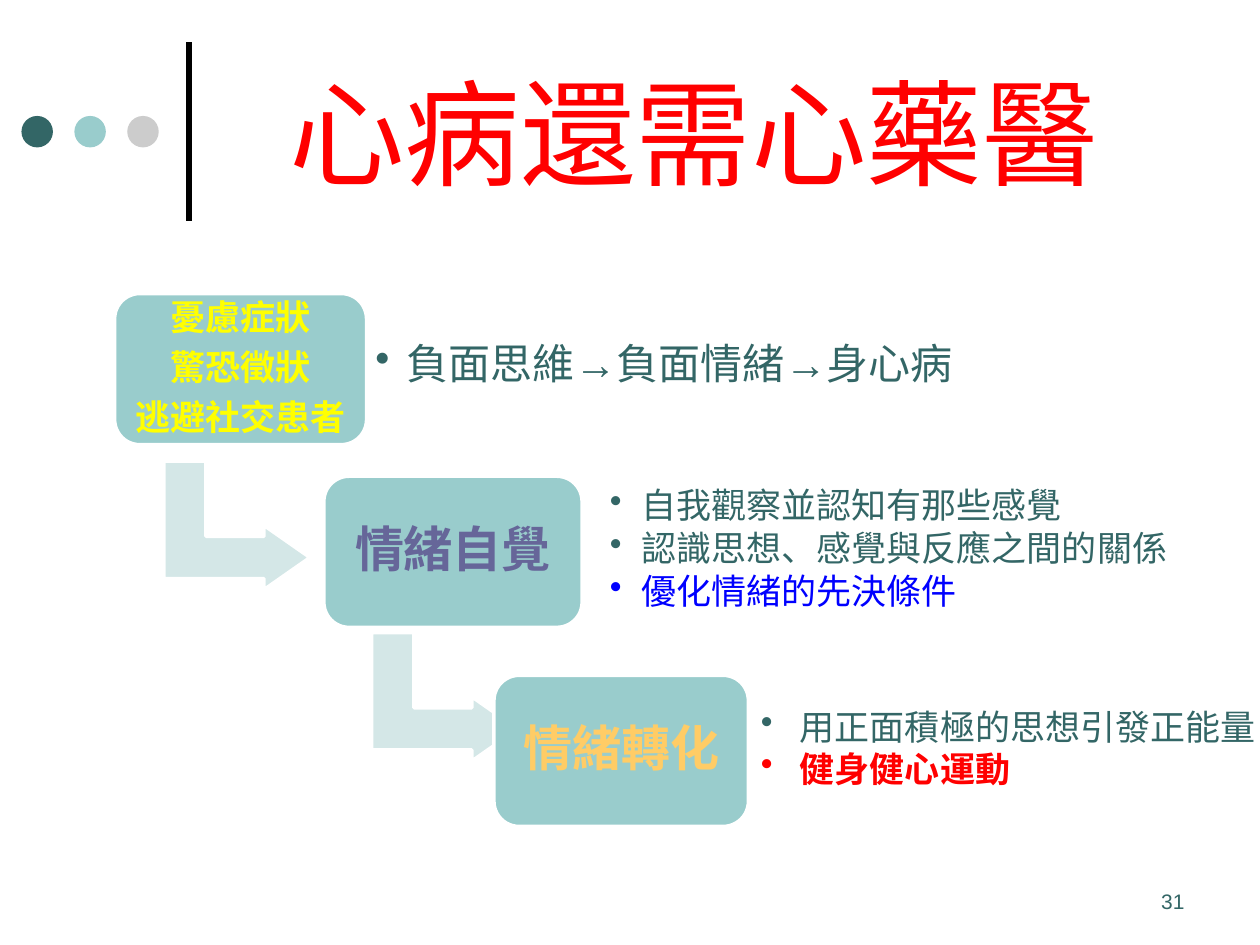
from lxml import etree
from pptx import Presentation
from pptx.dml.color import RGBColor
from pptx.enum import shapes, text
from pptx.oxml.ns import qn
from pptx.util import Inches, Pt

TEAL, AQUA, PALE, GREY = "336666", "99CCCC", "D4E7E7", "CCCCCC"
WHITE, BLACK, RED, BLUE = "FFFFFF", "000000", "FF0000", "0000FF"
YELLOW, PURPLE, ORANGE = "FFFF00", "666699", "FFCC66"
MIDDLE, CENTER = text.MSO_ANCHOR.MIDDLE, text.PP_ALIGN.CENTER


def colour(value):
    """Turn a hex string into a colour."""
    return RGBColor.from_string(value)


def add_figure(page, kind, box, fill, outline=None):
    """Add a flat preset shape in the box, with an optional outline."""
    figure = page.shapes.add_shape(kind, *map(Inches, box))
    figure.shadow.inherit = False
    figure.fill.solid()
    figure.fill.fore_color.rgb = colour(fill)
    if outline:
        figure.line.color.rgb = colour(outline)
        figure.line.width = Pt(2)
    else:
        figure.line.fill.background()
    return figure


def add_bullet(para, indent):
    """Give a paragraph a round bullet with a hanging indent."""
    properties = para._p.get_or_add_pPr()
    properties.set("marL", str(Inches(indent)))
    properties.set("indent", str(-Inches(indent)))
    etree.SubElement(properties, qn("a:buChar")).set("char", "•")


def add_text(page, box, lines, size, inset=0.1, anchor=MIDDLE, align=None,
             font="Arial", spacing=None, after=0, bullet=None):
    """Write lines of (wording, colour, bold) in the box."""
    frame = page.shapes.add_textbox(*map(Inches, box)).text_frame
    frame.word_wrap = True
    frame.vertical_anchor = anchor
    frame.margin_left = frame.margin_right = Inches(inset)
    frame.margin_top = frame.margin_bottom = Inches(min(inset, 0.12))
    frame.text = "\n".join(line[0] for line in lines)
    for para, (_, shade, bold) in zip(frame.paragraphs, lines):
        para.alignment = align
        para.line_spacing = spacing
        para.space_after = Pt(after)
        if bullet:
            add_bullet(para, bullet)
        for span in para.runs:
            span.font.size = Pt(size)
            span.font.bold = bold
            span.font.name = font
            span.font.color.rgb = colour(shade)
            east_asian = etree.SubElement(span.font._element, qn("a:ea"))
            east_asian.set("typeface", font)
    return frame


def add_header(page, left, top, width, height):
    """Place the dots, the upright rule and the title."""
    for index, shade in enumerate((TEAL, AQUA, GREY)):
        dot = (left + 0.42 * index, top + 0.59, 0.25, 0.25)
        add_figure(page, shapes.MSO_SHAPE.OVAL, dot, shade)
    rule = page.shapes.add_connector(
        shapes.MSO_CONNECTOR.STRAIGHT, Inches(left + 1.33), Inches(top + 1.42),
        Inches(left + 1.33), Inches(top))
    rule.line.color.rgb = colour(BLACK)
    rule.line.width = Pt(3)
    etree.SubElement(rule._element.spPr, qn("a:effectLst"))
    add_text(page, (left + 1.5, top - 0.12, width - 1.5, height),
             [("心病還需心藥醫", RED, False)], 66, align=CENTER,
             font="Noto Sans CJK TC")


def add_arrow(page, left, top):
    """Place the bent arrow that leads down to the next step."""
    arrow = add_figure(page, shapes.MSO_SHAPE.BENT_UP_ARROW,
                       (left, top, 1.02, 1.16), PALE, WHITE)
    arrow.rotation = 90
    for index, value in enumerate((0.328, 0.25, 0.358)):
        arrow.adjustments[index] = value


def add_step(page, left, top, width, labels, shade, size, inset):
    """Place a rounded card with its centred label."""
    height, edge = 1.2, 0.06
    card = add_figure(page, shapes.MSO_SHAPE.ROUNDED_RECTANGLE,
                      (left, top, width, height), AQUA, WHITE)
    card.adjustments[0] = 0.167
    add_text(page, (left + edge, top + edge, width - 2 * edge, height - 2 * edge),
             [(label, shade, True) for label in labels], size, inset=inset,
             align=CENTER, spacing=0.9, after=size * 0.35)


def add_details(page, box, lines, size, inset):
    """Place the bulleted notes beside a step."""
    add_text(page, box, lines, size, inset=inset, spacing=0.9,
             after=size * 0.15, bullet=0.25)


def add_steps(page, left, top):
    """Place the three descending steps with their arrows and notes."""
    add_arrow(page, left + 0.46, top + 1.26)
    add_step(page, left, top, 2, ["憂慮症狀", "驚恐徵狀", "逃避社交患者"],
             YELLOW, 20, 0.08)
    add_details(page, (left + 1.97, top + 0.24, 5.08, 0.67),
                [("負面思維→負面情緒→身心病", TEAL, False)], 24, 0.1)
    add_arrow(page, left + 2.11, top + 2.62)
    add_step(page, left + 1.66, top + 1.45, 2.05, ["情緒自覺"], PURPLE, 28, 0.12)
    add_details(page, (left + 3.85, top + 1.26, 4.71, 1.55),
                [("自我觀察並認知有那些感覺", TEAL, False),
                 ("認識思想、感覺與反應之間的關係", TEAL, False),
                 ("優化情緒的先決條件", BLUE, False)], 20, 0.08)
    add_step(page, left + 3.01, top + 3.03, 2.02, ["情緒轉化"], ORANGE, 28, 0.12)
    add_text(page, (left + 5.03, top + 3.17, 4.17, 0.77),
             [("用正面積極的思想引發正能量", TEAL, False),
              ("健身健心運動", RED, True)], 20,
             anchor=text.MSO_ANCHOR.TOP, bullet=0.31)


def main():
    """Build and save the slide."""
    deck = Presentation()
    deck.slide_width, deck.slide_height = Inches(10), Inches(7.5)
    page = deck.slides.add_slide(deck.slide_layouts[6])
    add_header(page, 0.17, 0.33, 9.17, 1.67)
    add_steps(page, 0.91, 2.33)
    add_text(page, (8.67, 6.95, 0.83, 0.4), [("31", TEAL, False)], 12,
             anchor=text.MSO_ANCHOR.BOTTOM, align=text.PP_ALIGN.RIGHT)
    deck.save("out.pptx")


if __name__ == "__main__":
    main()
